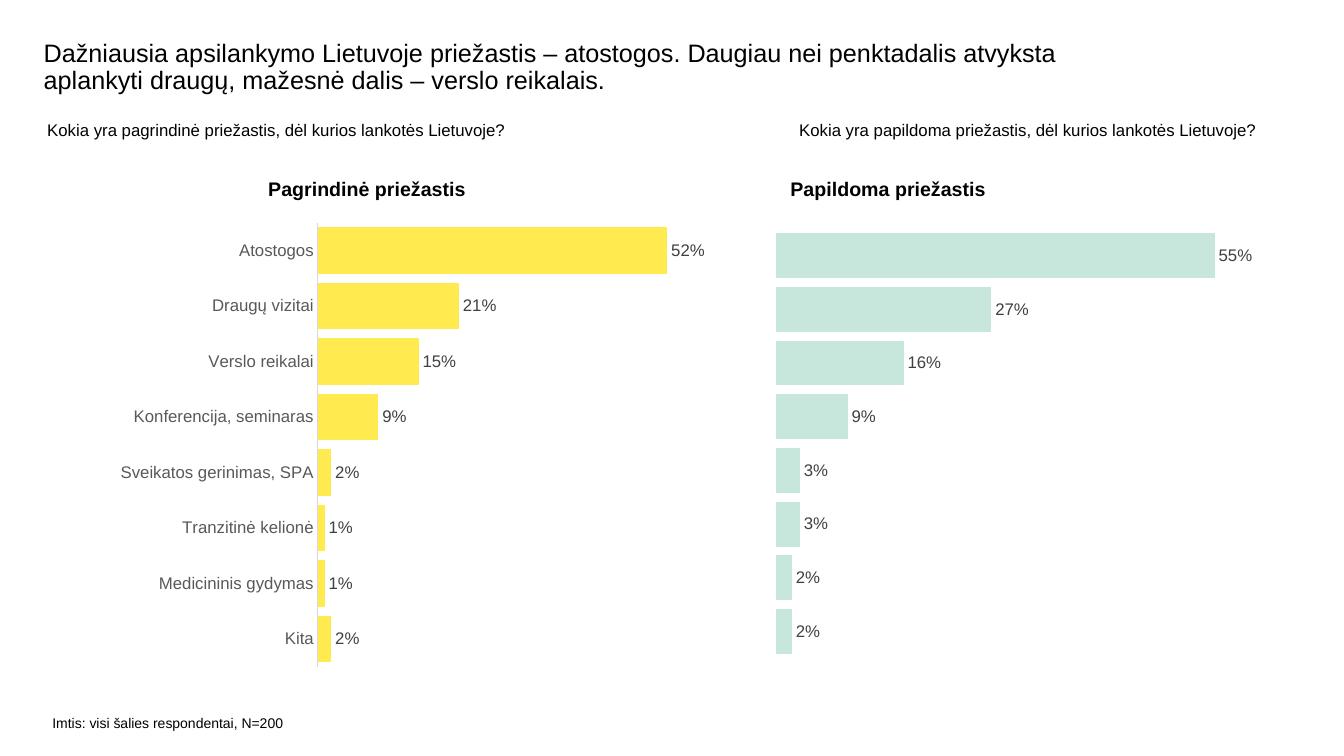
from lxml import etree
from pptx import Presentation
from pptx.chart import data
from pptx.dml.color import RGBColor
from pptx.enum import chart as ch, text
from pptx.oxml import ns
from pptx.util import Cm, Pt

FONT = "Arial"
BLACK = RGBColor(0x00, 0x00, 0x00)
LABEL_GREY = RGBColor(0x40, 0x40, 0x40)
AXIS_GREY = RGBColor(0x59, 0x59, 0x59)
LINE_GREY = RGBColor(0xD9, 0xD9, 0xD9)
YELLOW = RGBColor(0xFF, 0xEB, 0x50)
MINT = RGBColor(0xC7, 0xE6, 0xDC)

# Reasons from top to bottom, with the main and additional shares
REASONS = [
    ("Atostogos", 0.52, 0.55),
    ("Draugų vizitai", 0.21, 0.27),
    ("Verslo reikalai", 0.15, 0.16),
    ("Konferencija, seminaras", 0.09, 0.09),
    ("Sveikatos gerinimas, SPA", 0.02, 0.03),
    ("Tranzitinė kelionė", 0.01, 0.03),
    ("Medicininis gydymas", 0.01, 0.02),
    ("Kita", 0.02, 0.02),
]


def set_font(font, size, color=BLACK, bold=False):
    font.name, font.size, font.bold = FONT, Pt(size), bold
    font.color.rgb = color


def write(sp, content, size=12, bold=False, spacing=1.0):
    tf = sp.text_frame
    tf.word_wrap = True
    tf.auto_size = text.MSO_AUTO_SIZE.NONE
    tf.vertical_anchor = text.MSO_ANCHOR.TOP
    tf.margin_left = tf.margin_top = tf.margin_right = tf.margin_bottom = 0
    p = tf.paragraphs[0]
    p.alignment = text.PP_ALIGN.LEFT
    p.line_spacing = spacing
    p.space_before = Pt(0)
    r = p.add_run()
    r.text = content
    set_font(r.font, size, bold=bold)


def add_text(s, content, left, top, width, height, **fmt):
    sp = s.shapes.add_textbox(Cm(left), Cm(top), Cm(width), Cm(height))
    write(sp, content, **fmt)


def place_plot(chart, x, y, w, h):
    """Fix the inner plot area as fractions of the chart."""
    area = chart._chartSpace.chart.plotArea
    layout = area.find(ns.qn("c:layout"))
    if layout is None:
        layout = etree.Element(ns.qn("c:layout"))
        area.insert(0, layout)
    manual = etree.SubElement(layout, ns.qn("c:manualLayout"))
    settings = [("layoutTarget", "inner"), ("xMode", "edge"), ("yMode", "edge"),
                ("x", x), ("y", y), ("w", w), ("h", h)]
    for tag, val in settings:
        etree.SubElement(manual, ns.qn("c:" + tag)).set("val", str(val))


def add_bars(s, name, values, color, box, plot_box, show_reasons):
    cd = data.CategoryChartData(number_format="0%")
    cd.categories = [reason[0] for reason in reversed(REASONS)]
    cd.add_series(name, list(reversed(values)))
    frame = s.shapes.add_chart(ch.XL_CHART_TYPE.BAR_CLUSTERED,
                               *(Cm(v) for v in box), cd)
    chart = frame.chart
    chart.has_legend = chart.has_title = False
    set_font(chart.font, 10)
    place_plot(chart, *plot_box)

    # Axes
    value_axis = chart.value_axis
    value_axis.minimum_scale, value_axis.maximum_scale = 0, 0.6
    value_axis.has_major_gridlines = False
    value_axis.visible = False
    reason_axis = chart.category_axis
    reason_axis.visible = show_reasons
    reason_axis.major_tick_mark = ch.XL_TICK_MARK.NONE
    reason_axis.format.line.color.rgb = LINE_GREY
    reason_axis.format.line.width = Pt(0.75)
    set_font(reason_axis.tick_labels.font, 12, AXIS_GREY)

    # Bars and their labels
    plot = chart.plots[0]
    plot.gap_width = 20
    plot.vary_by_categories = False
    fill = plot.series[0].format.fill
    fill.solid()
    fill.fore_color.rgb = color
    plot.has_data_labels = True
    labels = plot.data_labels
    labels.show_value = True
    labels.number_format, labels.number_format_is_linked = "0%", False
    labels.position = ch.XL_LABEL_POSITION.OUTSIDE_END
    set_font(labels.font, 12, LABEL_GREY)


def main():
    prs = Presentation()
    prs.slide_width, prs.slide_height = Cm(33.87), Cm(19.05)
    s = prs.slides.add_slide(prs.slide_layouts[5])

    # Title
    title = s.shapes.title
    title.left, title.top = Cm(1.1), Cm(1.02)
    title.width, title.height = Cm(27.74), Cm(1.52)
    write(title, "Dažniausia apsilankymo Lietuvoje priežastis – atostogos. "
          "Daugiau nei penktadalis atvyksta aplankyti draugų, mažesnė dalis "
          "– verslo reikalais.", size=18, spacing=0.9)

    # Questions and chart headings
    for kind, question_left, heading_left in [("pagrindinė", 1.19, 6.76),
                                              ("papildoma", 20.14, 19.92)]:
        add_text(s, f"Kokia yra {kind} priežastis, dėl kurios lankotės Lietuvoje?",
                 question_left, 3.02, 12.6, 0.8)
        add_text(s, f"{kind.capitalize()} priežastis",
                 heading_left, 4.45, 8, 0.94, size=14, bold=True)

    # Charts
    _, main_shares, extra_shares = zip(*REASONS)
    add_bars(s, "Papildoma priežastis", extra_shares, MINT,
             (19.3, 5.54, 12.7, 11.28), (0.02, 0.02, 0.95, 0.96), False)
    add_bars(s, "Pagrindinė priežastis", main_shares, YELLOW,
             (2.77, 5.38, 15.88, 11.66), (0.33, 0.02, 0.64, 0.96), True)

    # Sample note
    add_text(s, "Imtis: visi šalies respondentai, N=200",
             1.32, 18.01, 6.43, 0.61, size=10)
    prs.save("out.pptx")


if __name__ == "__main__":
    main()
